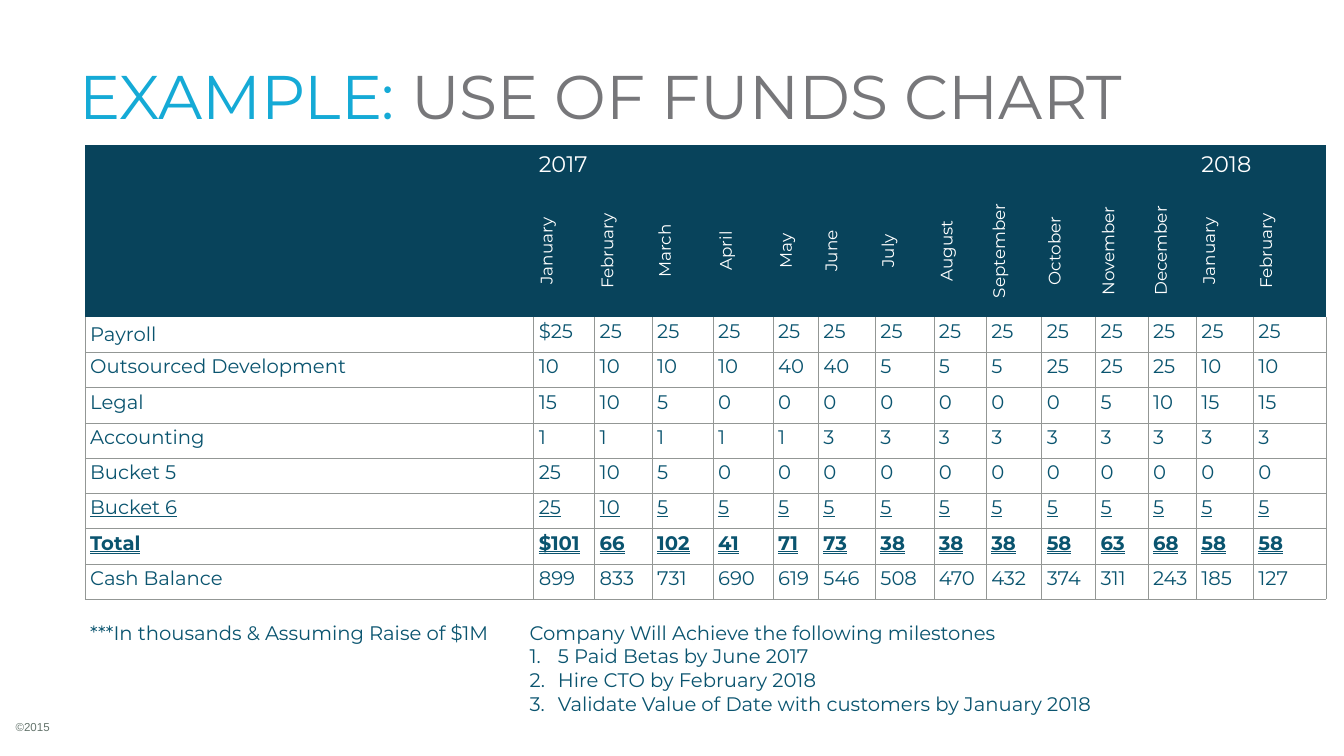
from lxml import etree
from pptx import Presentation
from pptx.dml.color import RGBColor
from pptx.enum import text
from pptx.oxml import ns
from pptx.util import Pt

CYAN = RGBColor(0x15, 0xAA, 0xD6)
GRAY = RGBColor(0x77, 0x77, 0x7A)
NAVY = RGBColor(0x08, 0x43, 0x5B)
TEAL = RGBColor(0x0A, 0x54, 0x6F)
RULE = RGBColor(0x93, 0x97, 0x95)
FOOTER = RGBColor(0x64, 0x74, 0x6C)
WHITE = RGBColor(0xFF, 0xFF, 0xFF)
PLAIN_TABLE = "{2D5ABB26-0587-4C30-8999-92F81FD0307C}"

COLUMNS = [640.8, 87.1, 82.1, 87.1, 85.7, 64.8, 81.4, 83.5,
           74.9, 79.2, 77, 74.9, 69.1, 81.4, 103.7]
YEAR_ROW, MONTH_ROW, AMOUNT_ROW = 57.6, 188.6, 50.4
YEARS = [("2017", 1, 12), ("2018", 13, 14)]
MONTHS = ["January", "February", "March", "April", "May", "June", "July", "August",
          "September", "October", "November", "December", "January", "February"]
FUNDS = [
    ("Payroll", ["$25"] + [25] * 13),
    ("Outsourced Development", [10, 10, 10, 10, 40, 40, 5, 5, 5, 25, 25, 25, 10, 10]),
    ("Legal", [15, 10, 5, 0, 0, 0, 0, 0, 0, 0, 5, 10, 15, 15]),
    ("Accounting", [1] * 5 + [3] * 9),
    ("Bucket 5", [25, 10, 5] + [0] * 11),
    ("Bucket 6", [25, 10] + [5] * 12),
    ("Total", ["$101", 66, 102, 41, 71, 73, 38, 38, 38, 58, 63, 68, 58, 58]),
    ("Cash Balance", [899, 833, 731, 690, 619, 546, 508, 470, 432, 374, 311, 243, 185, 127]),
]
UNDERLINES = {"Bucket 6": True, "Total": text.MSO_UNDERLINE.DOUBLE_LINE}
MILESTONES = ["5 Paid Betas by June 2017", "Hire CTO by February 2018",
              "Validate Value of Date with customers by January 2018"]


def style(font, size, color, name="Montserrat"):
    font.size = Pt(size)
    font.name = name
    font.color.rgb = color


def add_frame(slide, box, wrap=True):
    frame = slide.shapes.add_textbox(*map(Pt, box)).text_frame
    frame.word_wrap = wrap
    return frame


def add_title(slide, box):
    frame = add_frame(slide, box)
    frame.vertical_anchor = text.MSO_ANCHOR.MIDDLE
    frame.margin_left = frame.margin_right = Pt(17.3)
    frame.margin_top = frame.margin_bottom = Pt(8.6)
    for words, color in [("EXAMPLE: ", CYAN), ("USE OF FUNDS CHART", GRAY)]:
        run = frame.paragraphs[0].add_run()
        run.text = words
        style(run.font, 88, color)


def add_copyright(slide, box):
    frame = add_frame(slide, box, wrap=False)
    frame.vertical_anchor = text.MSO_ANCHOR.MIDDLE
    frame.margin_left = frame.margin_right = frame.margin_top = frame.margin_bottom = 0
    line = frame.paragraphs[0]
    line.text = "©2015"
    line.line_spacing = Pt(33)
    style(line.font, 16.5, FOOTER, "Arial")


def fill_cell(cell, words, size, color):
    line = cell.text_frame.paragraphs[0]
    line.text = str(words)
    style(line.font, size, color)
    return line


def paint(cell, color):
    cell.fill.solid()
    cell.fill.fore_color.rgb = color


def add_borders(cell):
    properties = cell._tc.get_or_add_tcPr()
    for side in ("lnL", "lnR", "lnB"):
        border = etree.SubElement(properties, ns.qn(f"a:{side}"), w=str(Pt(0.75)))
        fill = etree.SubElement(border, ns.qn("a:solidFill"))
        etree.SubElement(fill, ns.qn("a:srgbClr"), val=str(RULE))


def fill_header(table):
    for row in range(2):
        for column in range(len(COLUMNS)):
            paint(table.cell(row, column), NAVY)
    for year, first, last in YEARS:
        cell = table.cell(0, first)
        cell.merge(table.cell(0, last))
        cell.vertical_anchor = text.MSO_ANCHOR.MIDDLE
        fill_cell(cell, year, 32, WHITE)
    for column, month in enumerate(MONTHS, 1):
        cell = table.cell(1, column)
        cell.vertical_anchor = text.MSO_ANCHOR.MIDDLE
        cell._tc.get_or_add_tcPr().set("vert", "vert270")
        fill_cell(cell, month, 24, WHITE).alignment = text.PP_ALIGN.CENTER


def fill_amounts(table):
    for row, (category, amounts) in enumerate(FUNDS, 2):
        for column, words in enumerate([category] + amounts):
            cell = table.cell(row, column)
            add_borders(cell)
            paint(cell, WHITE)
            font = fill_cell(cell, words, 28, TEAL).font
            font.bold = category == "Total"
            font.underline = UNDERLINES.get(category, False)
    table.cell(2, 0).vertical_anchor = text.MSO_ANCHOR.MIDDLE


def add_funds_table(slide, left, top):
    heights = [YEAR_ROW, MONTH_ROW] + [AMOUNT_ROW] * len(FUNDS)
    table = slide.shapes.add_table(len(heights), len(COLUMNS), Pt(left), Pt(top),
                                   Pt(sum(COLUMNS)), Pt(sum(heights))).table
    table.first_row = table.horz_banding = False
    table._tbl.tblPr.find(ns.qn("a:tableStyleId")).text = PLAIN_TABLE
    for column, width in zip(table.columns, COLUMNS):
        column.width = Pt(width)
    for row, height in zip(table.rows, heights):
        row.height = Pt(height)
    fill_header(table)
    fill_amounts(table)


def add_assumption(slide, box):
    line = add_frame(slide, box).paragraphs[0]
    line.text = "***In thousands & Assuming Raise of $1M"
    style(line.font, 28, TEAL)


def add_milestones(slide, box):
    frame = add_frame(slide, box)
    heading = frame.paragraphs[0]
    heading.text = "Company Will Achieve the following milestones"
    style(heading.font, 28, TEAL)
    for milestone in MILESTONES:
        line = frame.add_paragraph()
        line.text = milestone
        properties = line._p.get_or_add_pPr()
        properties.set("marL", str(Pt(40.5)))
        properties.set("indent", str(-Pt(40.5)))
        etree.SubElement(properties, ns.qn("a:buFont"), typeface="+mj-lt")
        etree.SubElement(properties, ns.qn("a:buAutoNum"), type="arabicPeriod")
        style(line.font, 28, TEAL)


def main():
    deck = Presentation()
    deck.slide_width, deck.slide_height = Pt(1920), Pt(1080)
    slide = deck.slides.add_slide(deck.slide_layouts[6])
    add_copyright(slide, (22.3, 1018, 57.6, 28))
    add_title(slide, (96, 46, 1728, 180))
    add_funds_table(slide, 121.7, 206.6)
    add_assumption(slide, (121.7, 883.4, 627.8, 41))
    add_milestones(slide, (749.5, 883.4, 1145.5, 143.3))
    deck.save("out.pptx")


if __name__ == "__main__":
    main()
